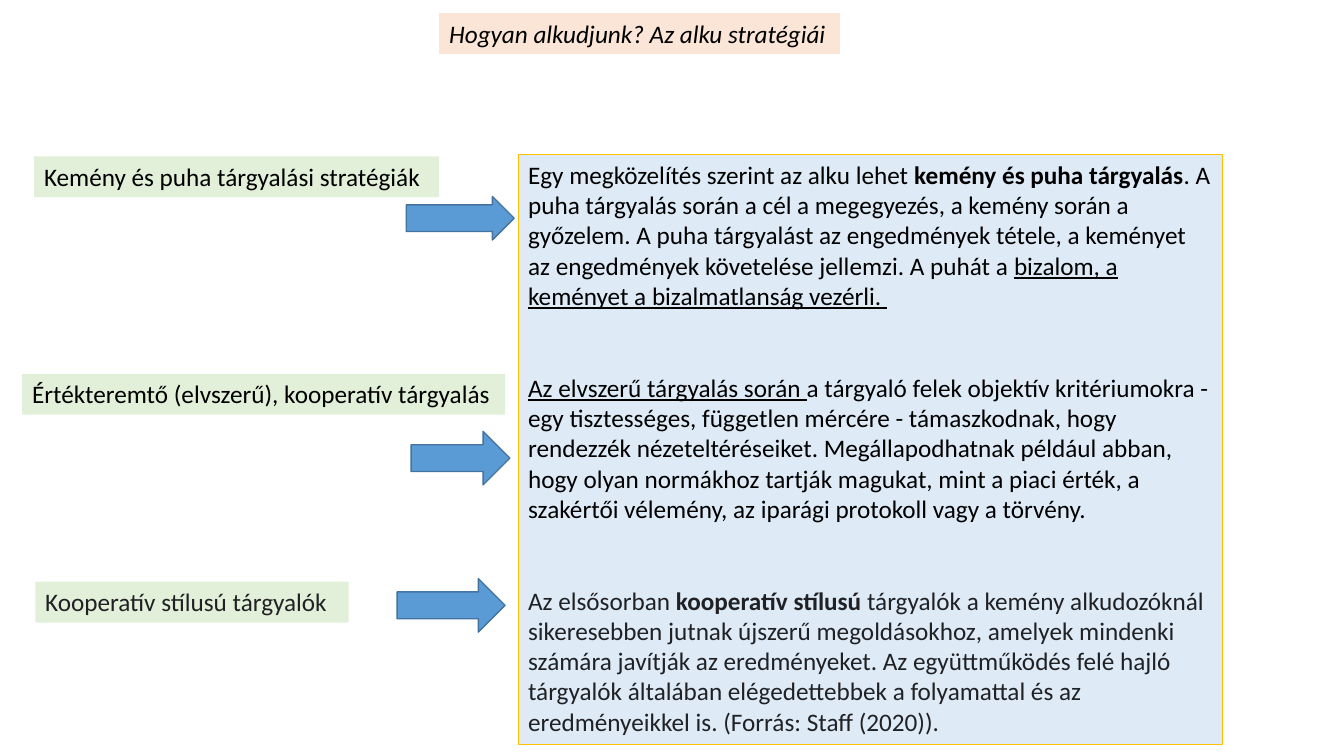
from pptx import Presentation
from pptx.dml.color import RGBColor
from pptx.enum.shapes import MSO_SHAPE
from pptx.enum.text import MSO_ANCHOR, PP_ALIGN
from pptx.util import Cm, Pt

RECTANGLE, RIGHT_ARROW = MSO_SHAPE.RECTANGLE, MSO_SHAPE.RIGHT_ARROW
TOP, LEFT = MSO_ANCHOR.TOP, PP_ALIGN.LEFT

THEME = {
    "font": "Calibri",
    "size": Pt(18),
    "paragraph_gap": Pt(44),
    "black": RGBColor.from_string("000000"),
    "charcoal": RGBColor.from_string("202124"),
    "peach": RGBColor.from_string("FBE5D6"),
    "green": RGBColor.from_string("E2F0D9"),
    "pale_blue": RGBColor.from_string("DEEBF7"),
    "gold": RGBColor.from_string("FFC000"),
    "arrow": RGBColor.from_string("5B9BD5"),
    "arrow_line": RGBColor.from_string("43739E"),
}


def add_box(kind, left, top, width, height, fill, line=None, line_width=1):
    shape = slide.shapes.add_shape(kind, Cm(left), Cm(top), Cm(width), Cm(height))
    shape.shadow.inherit = False
    shape.fill.solid()
    shape.fill.fore_color.rgb = THEME[fill]
    if line:
        shape.line.color.rgb = THEME[line]
        shape.line.width = Pt(line_width)
    else:
        shape.line.fill.background()
    shape.text_frame.word_wrap = True
    shape.text_frame.vertical_anchor = TOP
    return shape


def write(paragraph, runs, color):
    """Fill a paragraph with (text, style) runs; style is "", "bold" or "underline"."""
    paragraph.alignment = LEFT
    paragraph.font.name = THEME["font"]
    paragraph.font.size = THEME["size"]
    paragraph.font.color.rgb = THEME[color]
    for text, style in runs:
        run = paragraph.add_run()
        run.text = text
        if style:
            setattr(run.font, style, True)


presentation = Presentation()
presentation.slide_width, presentation.slide_height = Cm(33.87), Cm(19.05)
slide = presentation.slides.add_slide(presentation.slide_layouts[6])

# Title
title = add_box(RECTANGLE, 11.07, 0.33, 10.1, 1.03, "peach")
title_paragraph = title.text_frame.paragraphs[0]
write(title_paragraph, [("Hogyan alkudjunk? Az alku stratégiái", "")], "black")
title_paragraph.font.italic = True

# Explanations of the three strategies
explanations = [
    ("black", [
        ("Egy megközelítés szerint az alku lehet ", ""),
        ("kemény és puha tárgyalás", "bold"),
        (". A puha tárgyalás során a cél a megegyezés, a kemény során a győzelem. "
         "A puha tárgyalást az engedmények tétele, a keményet az engedmények "
         "követelése jellemzi. A puhát a ", ""),
        ("bizalom, a keményet a bizalmatlanság vezérli. ", "underline"),
    ]),
    ("black", [
        ("Az elvszerű tárgyalás során ", "underline"),
        ("a tárgyaló felek objektív kritériumokra - egy tisztességes, független "
         "mércére - támaszkodnak, hogy rendezzék nézeteltéréseiket. "
         "Megállapodhatnak például abban, hogy olyan normákhoz tartják magukat, "
         "mint a piaci érték, a szakértői vélemény, az iparági protokoll vagy "
         "a törvény.", ""),
    ]),
    ("charcoal", [
        ("Az elsősorban ", ""),
        ("kooperatív stílusú ", "bold"),
        ("tárgyalók a kemény alkudozóknál sikeresebben jutnak újszerű "
         "megoldásokhoz, amelyek mindenki számára javítják az eredményeket. "
         "Az együttműködés felé hajló tárgyalók általában elégedettebbek a "
         "folyamattal és az eredményeikkel is. (Forrás: Staff (2020)).", ""),
    ]),
]
panel = add_box(RECTANGLE, 13.06, 3.89, 17.75, 14.88, "pale_blue", "gold", 0.75)
for index, (color, runs) in enumerate(explanations):
    if index == 0:
        paragraph = panel.text_frame.paragraphs[0]
    else:
        paragraph = panel.text_frame.add_paragraph()
        paragraph.space_before = THEME["paragraph_gap"]
    write(paragraph, runs, color)

# Strategy labels: text, left, top, width, colour
labels = [
    ("Kemény és puha tárgyalási stratégiák", 0.86, 3.94, 10.21, "black"),
    ("Értékteremtő (elvszerű), kooperatív tárgyalás", 0.56, 9.42, 12.17, "black"),
    ("Kooperatív stílusú tárgyalók", 0.89, 14.66, 7.9, "charcoal"),
]
for text, left, top, width, color in labels:
    label = add_box(RECTANGLE, left, top, width, 1.03, "green")
    write(label.text_frame.paragraphs[0], [(text, "")], color)

# Arrows from labels to explanations: left, top, width, height, shaft thickness
arrows = [
    (10.24, 4.95, 2.72, 1.1, 0.61),
    (10.36, 10.87, 2.49, 1.35, 0.5),
    (10.01, 14.58, 2.72, 1.35, 0.5),
]
for left, top, width, height, shaft in arrows:
    arrow = add_box(RIGHT_ARROW, left, top, width, height, "arrow", "arrow_line")
    arrow.adjustments[0] = shaft

presentation.save("out.pptx")
